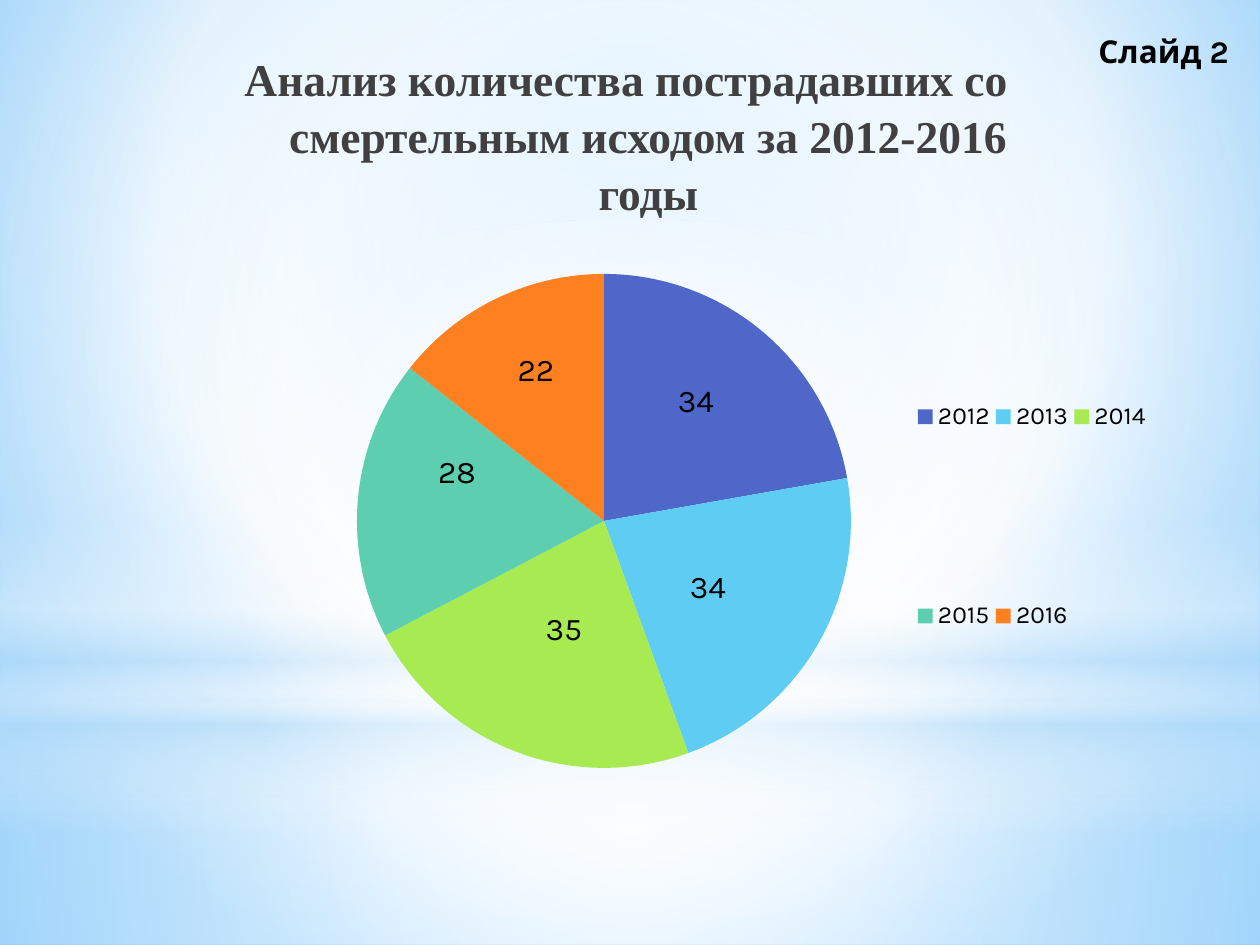
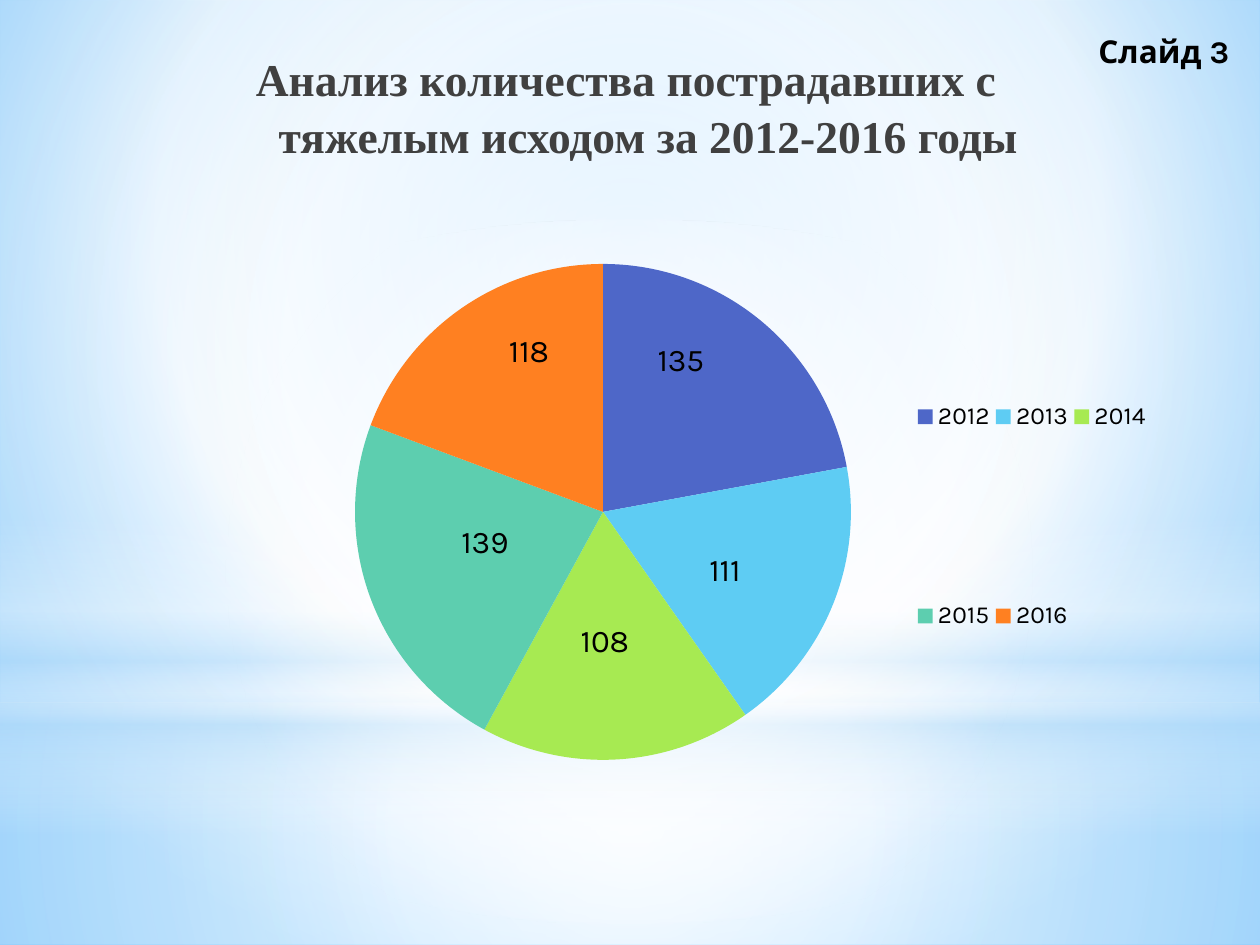
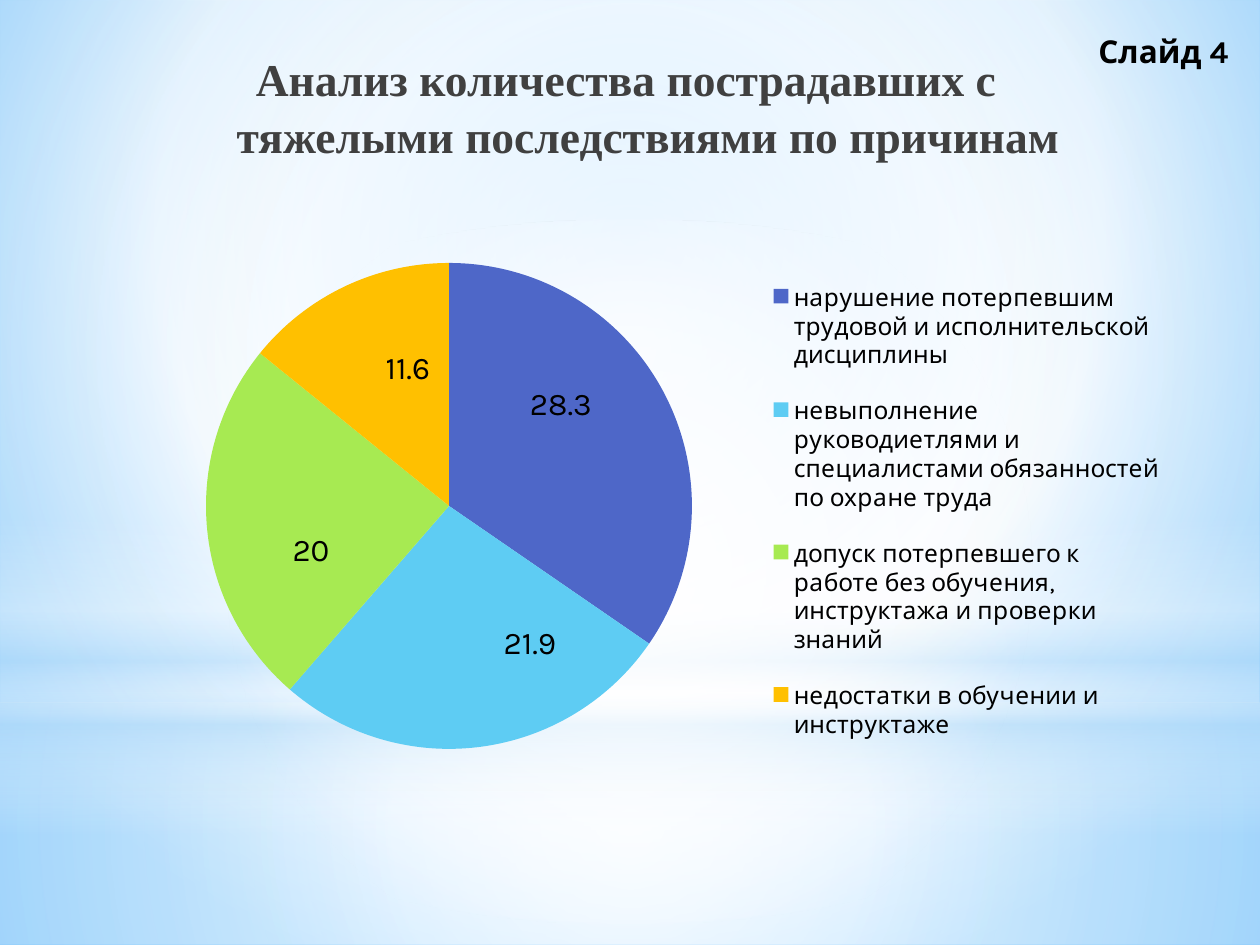
"""Build three pie chart slides on accident victims."""
from math import cos, pi, sin
from typing import NamedTuple

from lxml.etree import SubElement as Sub
from pptx import Presentation
from pptx.chart.data import CategoryChartData as Data
from pptx.dml.color import RGBColor
from pptx.enum.chart import XL_CHART_TYPE as Kind
from pptx.enum.chart import XL_LABEL_POSITION as Spot
from pptx.enum.chart import XL_LEGEND_POSITION as Side
from pptx.enum.shapes import MSO_SHAPE as Form
from pptx.enum.text import PP_ALIGN as Align
from pptx.oxml.ns import qn
from pptx.util import Emu, Pt

SCALE = 914400 / 126
WIDE, HIGH = 1260, 945
SANS, SERIF = "Karla", "Times New Roman"
BLACK = RGBColor(0x00, 0x00, 0x00)
GREY = RGBColor(0x40, 0x40, 0x40)
WHITE = RGBColor(0xFF, 0xFF, 0xFF)
PALE = RGBColor(0xB4, 0xDC, 0xFA)
SKY = RGBColor(0x9E, 0xD5, 0xFF)
AZURE = RGBColor(0x5B, 0xB9, 0xFF)
BLUE = RGBColor(0x4E, 0x67, 0xC8)
CYAN = RGBColor(0x5E, 0xCC, 0xF3)
LIME = RGBColor(0xA7, 0xEA, 0x52)
TEAL = RGBColor(0x5D, 0xCE, 0xAF)
ORANGE = RGBColor(0xFF, 0x80, 0x21)
GOLD = RGBColor(0xFF, 0xC0, 0x00)


class Box(NamedTuple):
    x: int
    y: int
    w: int
    h: int


class Stop(NamedTuple):
    at: int
    hue: RGBColor
    alpha: int = 100


class Glow(NamedTuple):
    form: Form
    box: Box
    stops: list[Stop]
    focus: tuple | None = (50, 50, 50, 50)


class Slice(NamedTuple):
    name: str
    value: float
    hue: RGBColor
    x: int
    y: int


class Page(NamedTuple):
    title: str
    tag: str
    frame: Box
    pie: Box
    key: Box
    cuts: list[Slice]


BACK = [Stop(0, SKY), Stop(60, WHITE), Stop(100, AZURE)]
GLOWS = [
    Glow(Form.RECTANGLE, Box(0, 703, WIDE, 242),
         [Stop(0, WHITE, 91), Stop(37, WHITE, 76), Stop(100, PALE, 79)]),
    Glow(Form.RECTANGLE, Box(0, 0, WIDE, 703),
         [Stop(0, WHITE, 89), Stop(48, WHITE, 62), Stop(100, PALE, 79)]),
    Glow(Form.RECTANGLE, Box(0, 519, WIDE, 315),
         [Stop(0, WHITE, 0), Stop(29, WHITE, 30), Stop(45, PALE, 40),
          Stop(55, WHITE, 26), Stop(65, PALE, 60), Stop(100, WHITE, 0)], None),
    Glow(Form.OVAL, Box(0, 220, WIDE, 703), [Stop(0, WHITE), Stop(56, WHITE, 0)]),
]
HEAD, TAG = Box(178, 39, 897, 137), Box(1086, 26, 174, 50)
FRAME, KEY = Box(128, 227, 1032, 595), Box(912, 232, 240, 569)

PAGES = [
    Page("Анализ количества пострадавших со смертельным исходом за 2012-2016 годы",
         "Слайд 2", FRAME, Box(357, 274, 494, 494), KEY,
         [Slice("2012", 34, BLUE, 696, 402), Slice("2013", 34, CYAN, 708, 588),
          Slice("2014", 35, LIME, 564, 630), Slice("2015", 28, TEAL, 457, 473),
          Slice("2016", 22, ORANGE, 536, 371)]),
    Page("Анализ количества пострадавших с тяжелым исходом за 2012-2016 годы",
         "Слайд 3", FRAME, Box(355, 264, 496, 496), KEY,
         [Slice("2012", 135, BLUE, 681, 361), Slice("2013", 111, CYAN, 725, 571),
          Slice("2014", 108, LIME, 605, 642), Slice("2015", 139, TEAL, 485, 543),
          Slice("2016", 118, ORANGE, 529, 352)]),
    Page("Анализ количества пострадавших с тяжелыми последствиями по причинам",
         "Слайд 4", Box(144, 214, 1032, 595), Box(206, 263, 486, 486),
         Box(768, 257, 397, 510),
         [Slice("нарушение потерпевшим трудовой и исполнительской дисциплины",
                28.3, BLUE, 561, 405),
          Slice("невыполнение руководиетлями и специалистами обязанностей "
                "по охране труда", 21.9, CYAN, 530, 644),
          Slice("допуск потерпевшего к работе без обучения, инструктажа "
                "и проверки знаний", 20, LIME, 311, 551),
          Slice("недостатки в обучении и инструктаже", 11.6, GOLD, 408, 369)]),
]


def px(n: float) -> Emu:
    return Emu(round(n * SCALE))


def place(box: Box) -> list[Emu]:
    return [px(n) for n in box]


def blend(fill, root, stops: list[Stop], focus: tuple | None) -> None:
    fill.solid()
    fill.fore_color.rgb = WHITE
    old = next(root.iter(qn("a:solidFill")))
    grad = old.makeelement(qn("a:gradFill"), {"rotWithShape": "1"})
    items = Sub(grad, qn("a:gsLst"))
    for stop in stops:
        item = Sub(items, qn("a:gs"), pos=str(stop.at * 1000))
        hue = Sub(item, qn("a:srgbClr"), val=str(stop.hue))
        if stop.alpha < 100:
            Sub(hue, qn("a:alpha"), val=str(stop.alpha * 1000))
    if focus:
        ring = Sub(grad, qn("a:path"), {"path": "circle"})
        Sub(ring, qn("a:fillToRect"),
            {side: str(n * 1000) for side, n in zip("ltrb", focus)})
    else:
        Sub(grad, qn("a:lin"), ang="5400000", scaled="0")
    old.getparent().replace(old, grad)


def style(font, size: int, name: str = SANS, hue: RGBColor = BLACK,
          bold: bool = False) -> None:
    font.size, font.name, font.bold = Pt(size), name, bold
    font.color.rgb = hue


def write(slide, text: str, box: Box, *, size: int, name: str = SANS,
          hue: RGBColor = BLACK, align: Align = Align.LEFT, hang: int = 0,
          top: int = 6, lead: float = 1.0) -> None:
    frame = slide.shapes.add_textbox(*place(box)).text_frame
    frame.word_wrap = True
    frame.margin_top = px(top)
    para = frame.paragraphs[0]
    para.alignment, para.line_spacing = align, lead
    if hang:
        props = para._p.get_or_add_pPr()
        props.set("marL", str(px(hang)))
        props.set("indent", str(-px(hang)))
    run = para.add_run()
    run.text = text
    style(run.font, size, name, hue, True)


def glow(slide, item: Glow) -> None:
    shape = slide.shapes.add_shape(item.form, *place(item.box))
    shape.shadow.inherit = False
    shape.line.fill.background()
    blend(shape.fill, shape.element, item.stops, item.focus)


def layout(node, **values) -> None:
    for old in node.findall(qn("c:layout")):
        node.remove(old)
    outer = node.makeelement(qn("c:layout"), {})
    lead = node.find(qn("c:idx"))
    if lead is None:
        lead = node.find(qn("c:legendPos"))
    node.insert(0 if lead is None else node.index(lead) + 1, outer)
    inner = Sub(outer, qn("c:manualLayout"))
    for name, value in values.items():
        Sub(inner, qn(f"c:{name}"), val=str(value))


def share(box: Box, frame: Box) -> dict:
    return {"xMode": "edge", "yMode": "edge",
            "x": round((box.x - frame.x) / frame.w, 4),
            "y": round((box.y - frame.y) / frame.h, 4),
            "w": round(box.w / frame.w, 4), "h": round(box.h / frame.h, 4)}


def label(chart, page: Page) -> None:
    points = chart.plots[0].series[0].points
    total = sum(cut.value for cut in page.cuts)
    pie, frame, past = page.pie, page.frame, 0
    moves = []
    for i, cut in enumerate(page.cuts):
        points[i].format.fill.solid()
        points[i].format.fill.fore_color.rgb = cut.hue
        mark = points[i].data_label
        style(mark.font, 18)
        mark.position = Spot.CENTER
        turn = 2 * pi * (past + cut.value / 2) / total
        past += cut.value
        x = pie.x + pie.w / 2 + pie.w / 4 * sin(turn)
        y = pie.y + pie.h / 2 - pie.h / 4 * cos(turn)
        moves.append(((cut.x - x) / frame.w, (cut.y - y) / frame.h))
    for node, (x, y) in zip(chart._chartSpace.iter(qn("c:dLbl")), moves):
        layout(node, x=round(x, 4), y=round(y, 4))


def draw(slide, page: Page) -> None:
    data = Data()
    data.categories = [cut.name for cut in page.cuts]
    data.add_series("Series 1", [cut.value for cut in page.cuts])
    chart = slide.shapes.add_chart(Kind.PIE, *place(page.frame), data).chart
    chart.has_title = False
    style(chart.font, 18)
    plot = chart.plots[0]
    plot.vary_by_categories = True
    plot.has_data_labels = True
    plot.data_labels.show_value = True
    style(plot.data_labels.font, 18)
    label(chart, page)
    chart.has_legend = True
    chart.legend.position = Side.RIGHT
    chart.legend.include_in_layout = False
    style(chart.legend.font, 14)
    root = chart._chartSpace
    area = next(root.iter(qn("c:plotArea")))
    layout(area, layoutTarget="inner", **share(page.pie, page.frame))
    layout(next(root.iter(qn("c:legend"))), **share(page.key, page.frame))


def main() -> None:
    deck = Presentation()
    deck.slide_width, deck.slide_height = px(WIDE), px(HIGH)
    for page in PAGES:
        slide = deck.slides.add_slide(deck.slide_layouts[6])
        blend(slide.background.fill, slide.element, BACK, (20, 10, 20, 60))
        for item in GLOWS:
            glow(slide, item)
        write(slide, page.title, HEAD, size=26, name=SERIF, hue=GREY,
              align=Align.CENTER, hang=44, top=10, lead=1.04)
        draw(slide, page)
        write(slide, page.tag, TAG, size=18)
    deck.save("out.pptx")


if __name__ == "__main__":
    main()
